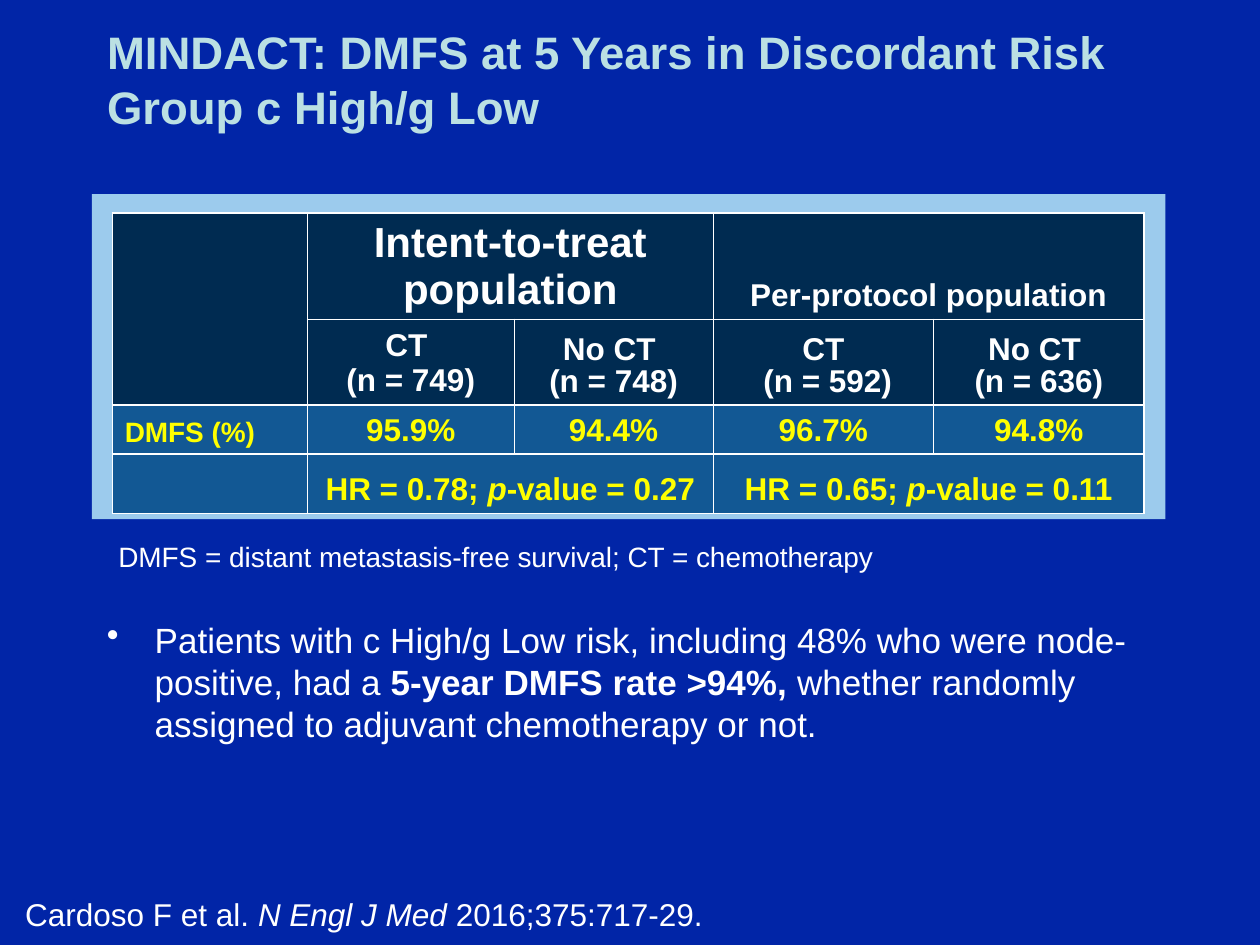
import lxml.etree
import pptx
import pptx.dml.color
import pptx.enum.shapes
import pptx.enum.text
import pptx.oxml
import pptx.oxml.ns
import pptx.util

Inches = pptx.util.Inches
Pt = pptx.util.Pt
ALIGN = pptx.enum.text.PP_ALIGN
ANCHOR = pptx.enum.text.MSO_ANCHOR

WHITE, YELLOW = "FFFFFF", "FFFF00"
HEADER_FILL, RESULT_FILL = "002B51", "125894"

COLUMN_WIDTHS = [1.55, 1.64, 1.58, 1.75, 1.67]
ROW_HEIGHTS = [0.65, 0.68, 0.39, 0.47]
MERGES = [(0, 0, 1, 0), (0, 1, 0, 2), (0, 3, 0, 4), (3, 1, 3, 2), (3, 3, 3, 4)]
# Each cell is a list of (text, style) runs; "\n" breaks the line.
CELLS = {
    (0, 1): [("Intent-to-treat population", "")],
    (0, 3): [("Per-protocol population", "")],
    (1, 1): [("CT \n(n = 749)", "")],
    (1, 2): [("No CT \n(n = 748)", "")],
    (1, 3): [("CT\n (n = 592)", "")],
    (1, 4): [("No CT \n(n = 636)", "")],
    (2, 0): [("DMFS (%)", "")],
    (2, 1): [("95.9%", "")],
    (2, 2): [("94.4%", "")],
    (2, 3): [("96.7%", "")],
    (2, 4): [("94.8%", "")],
    (3, 1): [("HR = 0.78; ", ""), ("p", "italic"), ("-value = 0.27", "")],
    (3, 3): [("HR = 0.65; ", ""), ("p", "italic"), ("-value = 0.11", "")],
}
FONT_SIZES = {(0, 1): 24, (2, 0): 16}


def color(hex_string):
    return pptx.dml.color.RGBColor.from_string(hex_string)


def set_font(paragraph, size, hex_string, bold=None):
    font = paragraph.font
    font.name, font.size, font.bold = "Arial", Pt(size), bold
    font.color.rgb = color(hex_string)


def add_runs(paragraph, runs):
    """Add (text, style) runs, where style is "", "bold" or "italic"."""
    for text, style in runs:
        for index, line in enumerate(text.split("\n")):
            if index:
                paragraph.add_line_break()
            run = paragraph.add_run()
            run.text = line
            if style:
                setattr(run.font, style, True)


def add_text(slide, box, runs, size):
    text_box = slide.shapes.add_textbox(*map(Inches, box))
    text_frame = text_box.text_frame
    text_frame.word_wrap = True
    paragraph = text_frame.paragraphs[0]
    add_runs(paragraph, runs)
    set_font(paragraph, size, WHITE)
    return text_frame


def set_title(slide, box, text):
    title = slide.shapes.title
    title.left, title.top, title.width, title.height = map(Inches, box)
    title.text_frame.text = text
    title.text_frame.vertical_anchor = ANCHOR.MIDDLE
    paragraph = title.text_frame.paragraphs[0]
    paragraph.alignment = ALIGN.LEFT
    set_font(paragraph, 26, "BBE0E3", True)


def add_panel(slide, box):
    panel = slide.shapes.add_shape(
        pptx.enum.shapes.MSO_SHAPE.RECTANGLE, *map(Inches, box))
    panel.shadow.inherit = False
    panel.fill.solid()
    panel.fill.fore_color.rgb = color("9CCBED")
    panel.line.fill.background()


def set_borders(cell):
    properties = cell._tc.get_or_add_tcPr()
    namespace = pptx.oxml.ns.nsdecls("a")
    for index, side in enumerate("LRTB"):
        properties.insert(index, pptx.oxml.parse_xml(
            f'<a:ln{side} {namespace} w="{Pt(0.75)}"><a:solidFill>'
            f'<a:srgbClr val="{WHITE}"/></a:solidFill></a:ln{side}>'))


def fill_cell(cell, row, column):
    cell.fill.solid()
    cell.fill.fore_color.rgb = color(HEADER_FILL if row < 2 else RESULT_FILL)
    cell.vertical_anchor = ANCHOR.BOTTOM
    set_borders(cell)
    paragraph = cell.text_frame.paragraphs[0]
    add_runs(paragraph, CELLS.get((row, column), []))
    paragraph.alignment = ALIGN.CENTER if column else ALIGN.LEFT
    if column != 1:
        paragraph.line_spacing = 0.9
    set_font(paragraph, FONT_SIZES.get((row, column), 18),
             WHITE if row < 2 else YELLOW, True)


def add_results_table(slide, left, top):
    table = slide.shapes.add_table(
        len(ROW_HEIGHTS), len(COLUMN_WIDTHS), Inches(left), Inches(top),
        Inches(sum(COLUMN_WIDTHS)), Inches(sum(ROW_HEIGHTS))).table
    table.first_row = table.horz_banding = False
    for column, width in zip(table.columns, COLUMN_WIDTHS):
        column.width = Inches(width)
    for row, height in zip(table.rows, ROW_HEIGHTS):
        row.height = Inches(height)
    for first_row, first_column, last_row, last_column in MERGES:
        table.cell(first_row, first_column).merge(
            table.cell(last_row, last_column))
    for row in range(len(ROW_HEIGHTS)):
        for column in range(len(COLUMN_WIDTHS)):
            fill_cell(table.cell(row, column), row, column)


def add_conclusion(slide, box):
    text_frame = add_text(slide, box, [], 20)
    paragraph = text_frame.paragraphs[0]
    properties = paragraph._p.get_or_add_pPr()
    properties.set("marL", str(Inches(0.38)))
    properties.set("indent", str(Inches(-0.38)))
    bullet = lxml.etree.Element(pptx.oxml.ns.qn("a:buChar"), char="•")
    properties.insert(0, bullet)
    add_runs(paragraph, [
        ("Patients with c High/g Low risk, including 48% who were "
         "node-positive, had a ", ""),
        ("5-year DMFS rate >94%, ", "bold"),
        ("whether randomly assigned to adjuvant chemotherapy or not.", "")])


def add_citation(slide, box):
    text_frame = add_text(slide, box, [
        ("Cardoso F et al. ", ""), ("N Engl J Med ", "italic"),
        ("2016;375:717-29.", "")], 18)
    text_frame.vertical_anchor = ANCHOR.BOTTOM
    text_frame.margin_left = Inches(0.2)
    text_frame.margin_bottom = Inches(0.1)


def main():
    presentation = pptx.Presentation()
    presentation.slide_width, presentation.slide_height = Inches(10), Inches(7.5)
    slide = presentation.slides.add_slide(presentation.slide_layouts[5])
    slide.background.fill.solid()
    slide.background.fill.fore_color.rgb = color("0125A7")

    set_title(slide, (0.75, 0, 8.5, 1.25),
              "MINDACT: DMFS at 5 Years in Discordant Risk Group c High/g Low")
    add_panel(slide, (0.73, 1.54, 8.52, 2.58))
    add_results_table(slide, 0.89, 1.69)
    add_text(slide, (0.84, 4.23, 7.89, 0.37), [
        ("DMFS = distant metastasis-free survival; CT = chemotherapy", "")], 16)
    add_conclusion(slide, (0.75, 4.86, 8.5, 2.23))
    add_citation(slide, (0, 7.1, 10, 0.4))
    presentation.save("out.pptx")


if __name__ == "__main__":
    main()
